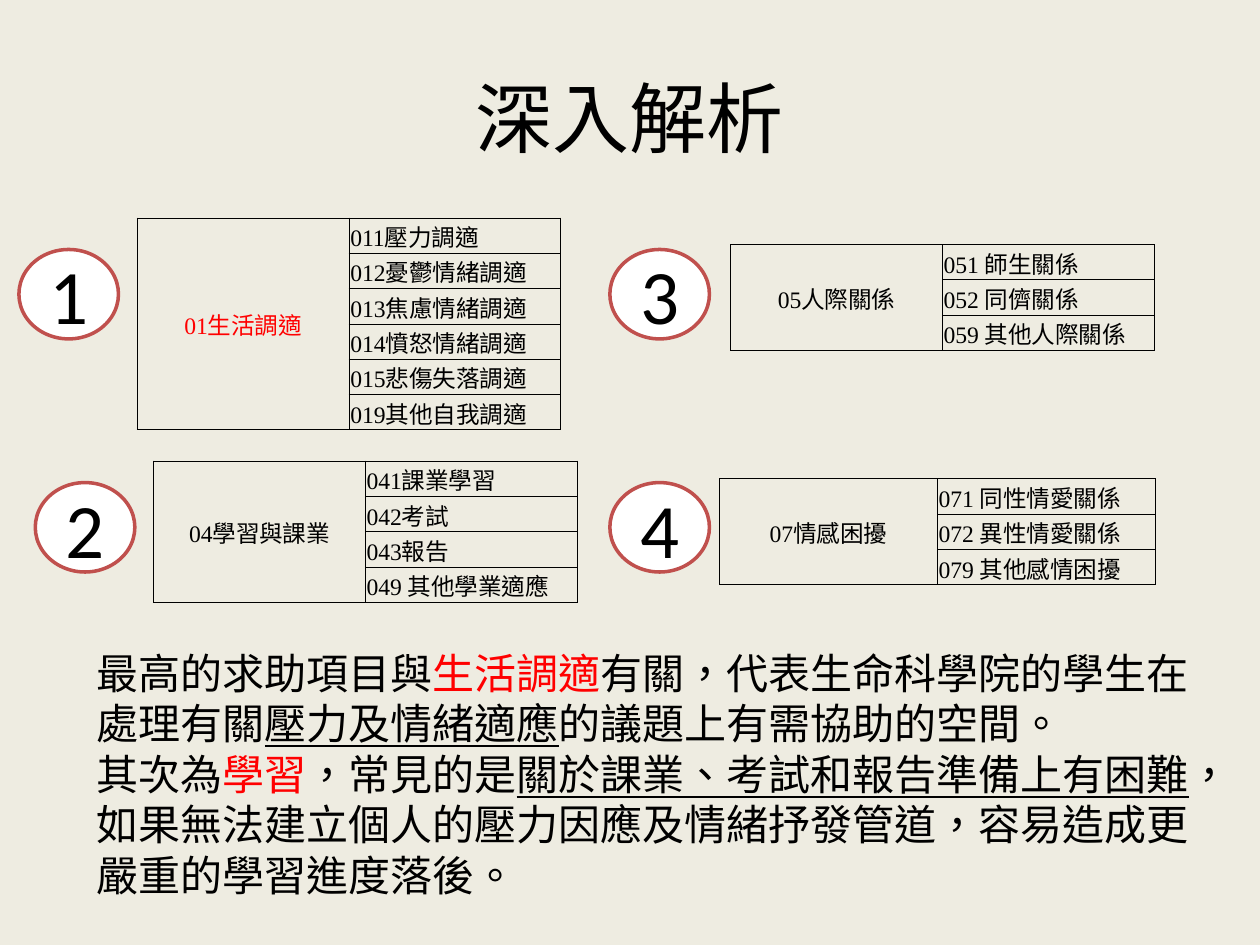
"""Builds a slide of four numbered counselling topics with a summary below."""
from lxml import etree
from pptx import Presentation, util as u
from pptx.dml.color import RGBColor
from pptx.enum import shapes, text
from pptx.oxml import ns

BLACK, RED, WHITE, RING, CREAM = "000000", "FF0000", "FFFFFF", "C0504D", "EEECE1"


def paint(color_format, value):
    color_format.rgb = RGBColor.from_string(value)


def add_run(paragraph, words, size, font="Calibri", color=BLACK, east_asian=None):
    run = paragraph.add_run()
    run.text = words
    run.font.size, run.font.name = u.Pt(size), font
    paint(run.font.fill.fore_color if run.font.fill.solid() else run.font.color, color)
    properties = run.font._element
    properties.set("lang", "zh-TW")
    if east_asian:
        run.font._element.find(ns.qn("a:latin")).addnext(
            etree.Element(ns.qn("a:ea"), typeface=east_asian))
    return run


presentation = Presentation()
presentation.slide_width, presentation.slide_height = u.Inches(10), u.Inches(7.5)
slide = presentation.slides.add_slide(presentation.slide_layouts[5])
slide.background.fill.solid()
paint(slide.background.fill.fore_color, CREAM)

title = slide.shapes.title
title.left, title.top, title.width, title.height = map(u.Inches, (0.5, 0.3, 9, 1.25))
title.text_frame.vertical_anchor = text.MSO_ANCHOR.MIDDLE
title.text_frame.paragraphs[0].alignment = text.PP_ALIGN.CENTER
add_run(title.text_frame.paragraphs[0], "深入解析", 44)

row_height = 0.26
badge_rows = (1.98, 3.83)
topics = [
    (0.15, 1.09, 1.73, 1.68, RED, ("01", "生活調適"),
     [("011", "壓力調適"), ("012", "憂鬱情緒調適"), ("013", "焦慮情緒調適"),
      ("014", "憤怒情緒調適"), ("015", "悲傷失落調適"), ("019", "其他自我調適")]),
    (0.28, 1.22, 3.66, 1.68, BLACK, ("04", "學習與課業"),
     [("041", "課業學習"), ("042", "考試"), ("043", "報告"), ("049 ", "其他學業適應")]),
    (4.84, 5.8, 1.94, 1.68, BLACK, ("05", "人際關係"),
     [("051 ", "師生關係"), ("052 ", "同儕關係"), ("059 ", "其他人際關係")]),
    (4.84, 5.71, 3.8, 1.73, BLACK, ("07", "情感困擾"),
     [("071 ", "同性情愛關係"), ("072 ", "異性情愛關係"), ("079 ", "其他感情困擾")]),
]

for index, (badge_left, left, top, column, color, heading, items) in enumerate(topics):
    table = slide.shapes.add_table(
        len(items), 2, u.Inches(left), u.Inches(top),
        u.Inches(2 * column), u.Inches(row_height * len(items))).table
    table.first_row = table.horz_banding = False
    for cell in table.iter_cells():
        cell.fill.background()
        cell.vertical_anchor = text.MSO_ANCHOR.MIDDLE
        cell.margin_left = cell.margin_right = cell.margin_top = u.Inches(0.01)
        cell.margin_bottom = 0
        cell.text_frame.paragraphs[0].font.size = u.Pt(13.5)
        for position, side in enumerate(("a:lnL", "a:lnR", "a:lnT", "a:lnB")):
            border = etree.Element(ns.qn(side), w=str(u.Pt(0.5)))
            fill = etree.SubElement(border, ns.qn("a:solidFill"))
            etree.SubElement(fill, ns.qn("a:srgbClr"), val=BLACK)
            cell._tc.tcPr.insert(position, border)
    table.cell(0, 0).merge(table.cell(len(items) - 1, 0))
    table.cell(0, 0).text_frame.paragraphs[0].alignment = text.PP_ALIGN.CENTER
    entries = [(0, 0, color, heading)]
    entries += [(row, 1, BLACK, item) for row, item in enumerate(items)]
    for row, col, shade, (code, name) in entries:
        paragraph = table.cell(row, col).text_frame.paragraphs[0]
        add_run(paragraph, code, 13.5, "Times New Roman", shade)
        add_run(paragraph, name, 13.5, "Noto Sans CJK SC", shade, "Noto Sans CJK SC")

    badge = slide.shapes.add_shape(
        shapes.MSO_SHAPE.OVAL, u.Inches(badge_left), u.Inches(badge_rows[index % 2]),
        u.Inches(0.79), u.Inches(0.71))
    badge.shadow.inherit = False
    badge.fill.solid()
    paint(badge.fill.fore_color, WHITE)
    paint(badge.line.color, RING)
    badge.line.width = u.Pt(2)
    badge.text_frame.vertical_anchor = text.MSO_ANCHOR.MIDDLE
    badge.text_frame.paragraphs[0].alignment = text.PP_ALIGN.CENTER
    add_run(badge.text_frame.paragraphs[0], str(index + 1), 44)

summary = slide.shapes.add_textbox(*map(u.Inches, (0.67, 5.09, 9.06, 2.12))).text_frame
summary.word_wrap = True
summary.auto_size = text.MSO_AUTO_SIZE.SHAPE_TO_FIT_TEXT
sentences = [
    [("最高的求助項目與", BLACK, False), ("生活調適", RED, False),
     ("有關，代表生命科學院的學生在處理有關", BLACK, False),
     ("壓力及情緒適應", BLACK, True), ("的議題上有需協助的空間。", BLACK, False)],
    [("其次為", BLACK, False), ("學習", RED, False), ("，常見的是", BLACK, False),
     ("關於課業、考試和報告準備上有困難", BLACK, True),
     ("，如果無法建立個人的壓力因應及情緒抒發管道，容易造成更嚴重的學習進度落後。",
      BLACK, False)],
]
summary.add_paragraph()
for paragraph, parts in zip(summary.paragraphs, sentences):
    for words, color, underlined in parts:
        add_run(paragraph, words, 24, color=color).font.underline = underlined

presentation.save("out.pptx")
